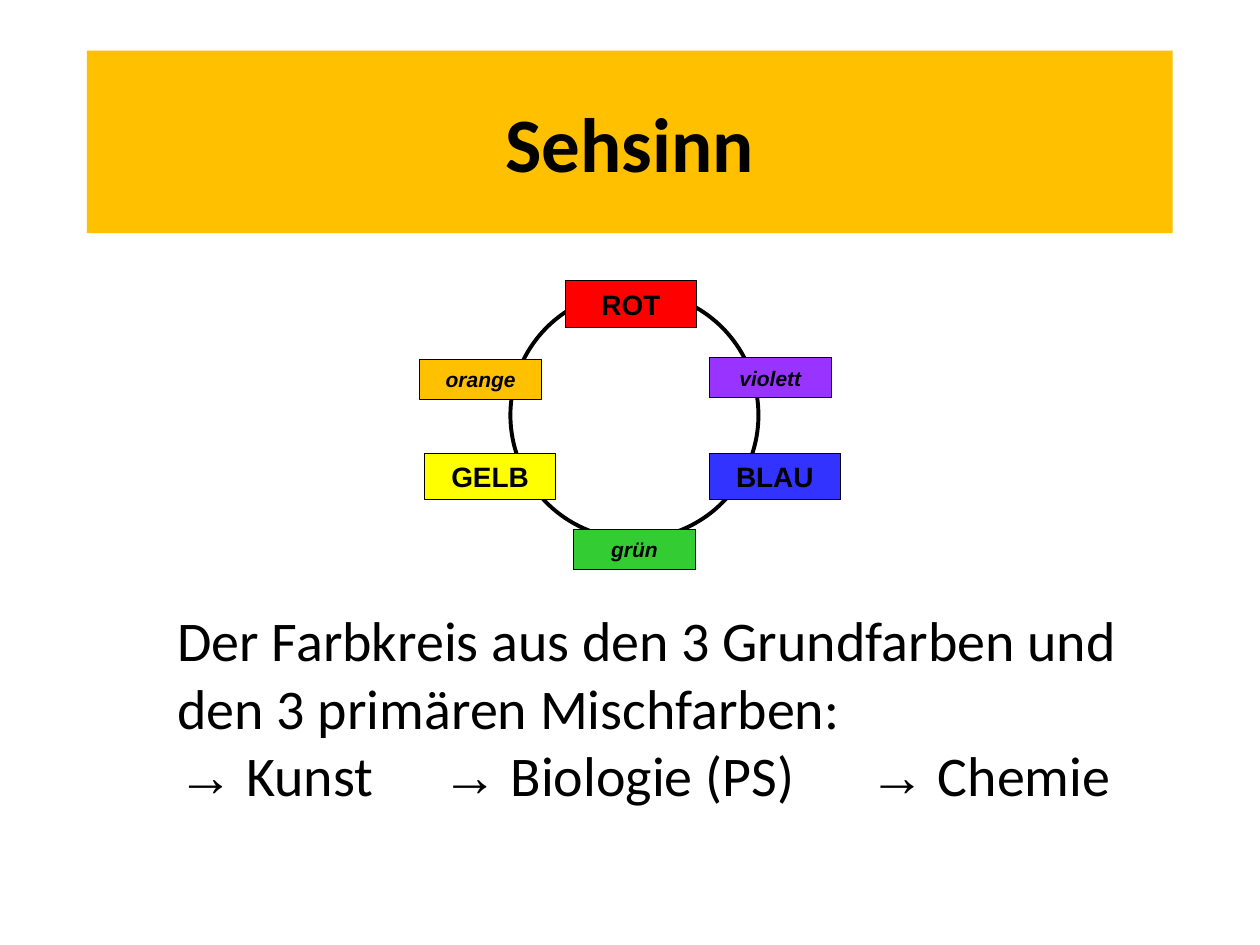
"""Build the slide "Sehsinn" with the colour wheel of primary and mixed colours."""
from lxml.etree import SubElement
from pptx import Presentation
from pptx.dml.color import RGBColor
from pptx.enum.shapes import MSO_SHAPE
from pptx.enum.text import MSO_ANCHOR, PP_ALIGN
from pptx.oxml.ns import qn
from pptx.util import Cm, Pt


def color(hex_value):
    return RGBColor.from_string(hex_value)


def add_text(paragraph, text, size, font="Calibri", bold=False, italic=False):
    span = paragraph.add_run()
    span.text = text
    span.font.name = font
    span.font.size = Pt(size)
    span.font.bold = bold
    span.font.italic = italic
    span.font.color.rgb = color("000000")


deck = Presentation()
deck.slide_width, deck.slide_height = Cm(25.4), Cm(19.05)
page = deck.slides.add_slide(deck.slide_layouts[5])

title = page.shapes.title
title.left, title.top, title.width, title.height = Cm(1.75), Cm(1.02), Cm(21.89), Cm(3.68)
title.fill.solid()
title.fill.fore_color.rgb = color("FFC000")
title.text_frame.vertical_anchor = MSO_ANCHOR.MIDDLE
heading = title.text_frame.paragraphs[0]
heading.alignment = PP_ALIGN.CENTER
add_text(heading, "Sehsinn", 44, bold=True)

wheel = page.shapes.add_group_shape()
ring = wheel.shapes.add_shape(MSO_SHAPE.OVAL, Cm(10.29), Cm(5.87), Cm(5), Cm(5))
ring.shadow.inherit = False
ring.fill.background()
ring.line.color.rgb = color("000000")
ring.line.width = Pt(2.25)

primary = {"width": 2.64, "height": 0.94, "size": 16, "italic": False}
mixed = {"width": 2.46, "height": 0.81, "size": 12, "italic": True}
labels = [
    ("ROT", 11.4, 5.66, "FF0000", primary),
    ("BLAU", 14.3, 9.14, "3333FF", primary),
    ("GELB", 8.56, 9.14, "FFFF00", primary),
    ("orange", 8.46, 7.24, "FFC000", mixed),
    ("violett", 14.3, 7.21, "9933FF", mixed),
    ("grün", 11.56, 10.67, "33CC33", mixed),
]
for name, left, top, fill, style in labels:
    label = wheel.shapes.add_shape(
        MSO_SHAPE.RECTANGLE, Cm(left), Cm(top), Cm(style["width"]), Cm(style["height"]))
    label.shadow.inherit = False
    label.fill.solid()
    label.fill.fore_color.rgb = color(fill)
    label.line.color.rgb = color("000000")
    label.line.width = Pt(0.5)
    label.text_frame.vertical_anchor = MSO_ANCHOR.MIDDLE
    caption = label.text_frame.paragraphs[0]
    caption.alignment = PP_ALIGN.CENTER
    add_text(caption, name, style["size"], "Arial", bold=True, italic=style["italic"])

box = page.shapes.add_textbox(Cm(3.33), Cm(12.09), Cm(19.66), Cm(4.37))
box.text_frame.word_wrap = True
intro = box.text_frame.paragraphs[0]
add_text(intro, "Der Farbkreis aus den 3 Grundfarben und den 3 primären Mischfarben:", 32)

subjects = box.text_frame.add_paragraph()
tab_stops = SubElement(subjects._p.get_or_add_pPr(), qn("a:tabLst"))
for position in (5.33, 13.94):
    SubElement(tab_stops, qn("a:tab"), pos=str(Cm(position)), algn="l")
for subject in ("Kunst\t", "Biologie (PS)\t", "Chemie"):
    add_text(subjects, "→", 32, "Arial")
    add_text(subjects, f" {subject}", 32)

deck.save("out.pptx")
